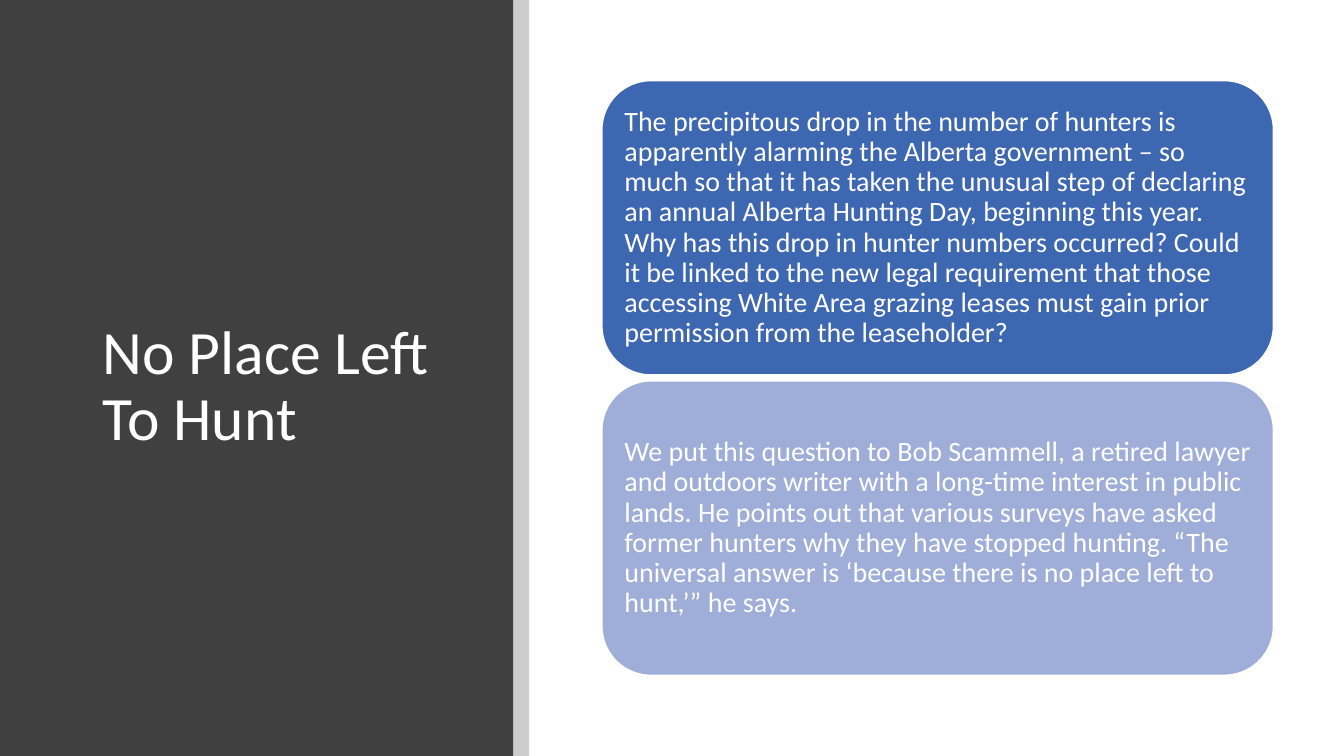
from dataclasses import dataclass

from lxml.etree import SubElement
from pptx import Presentation
from pptx.dml.color import RGBColor
from pptx.enum.shapes import MSO_SHAPE
from pptx.enum.text import MSO_ANCHOR, PP_ALIGN
from pptx.oxml.ns import qn
from pptx.shapes.autoshape import Shape
from pptx.slide import Slide
from pptx.util import Inches, Pt

WIDTH = Inches(13.33)
HEIGHT = Inches(7.5)
FONT = "Calibri"
WHITE = RGBColor(0xFF, 0xFF, 0xFF)
BLACK = RGBColor(0x00, 0x00, 0x00)
CHARCOAL = RGBColor(0x40, 0x40, 0x40)
BLUE = RGBColor(0x3E, 0x67, 0xB2)
PALE_BLUE = RGBColor(0x9F, 0xAE, 0xD8)

PANEL_WIDTH = 38.18
STRIP_WIDTH = 1.2
CARD_LEFT = 44.79
CARD_TOP = 10.67
CARD_WIDTH = 49.96
CARD_HEIGHT = 38.93
CARD_GAP = 0.8


@dataclass(frozen=True)
class Area:
    """A rectangle in percent of the slide's width and height."""

    left: float
    top: float
    width: float
    height: float

    def lengths(self) -> tuple[int, int, int, int]:
        return (
            int(WIDTH * self.left / 100),
            int(HEIGHT * self.top / 100),
            int(WIDTH * self.width / 100),
            int(HEIGHT * self.height / 100),
        )


@dataclass(frozen=True)
class Card:
    text: str
    fill: RGBColor


CARDS = (
    Card(
        "The precipitous drop in the number of hunters is apparently alarming "
        "the Alberta government – so much so that it has taken the unusual step "
        "of declaring an annual Alberta Hunting Day, beginning this year. Why has "
        "this drop in hunter numbers occurred? Could it be linked to the new legal "
        "requirement that those accessing White Area grazing leases must gain "
        "prior permission from the leaseholder?",
        BLUE,
    ),
    Card(
        "We put this question to Bob Scammell, a retired lawyer and outdoors "
        "writer with a long-time interest in public lands. He points out that "
        "various surveys have asked former hunters why they have stopped hunting. "
        "“The universal answer is ‘because there is no place left to hunt,’” he says.",
        PALE_BLUE,
    ),
)


def add_block(page: Slide, kind: MSO_SHAPE, area: Area, fill: RGBColor) -> Shape:
    block = page.shapes.add_shape(kind, *area.lengths())
    block.shadow.inherit = False
    block.fill.solid()
    block.fill.fore_color.rgb = fill
    block.line.fill.background()
    return block


def set_opacity(block: Shape, percent: int) -> None:
    color = block.fill._xPr.find(f"{qn('a:solidFill')}/{qn('a:srgbClr')}")
    SubElement(color, qn("a:alpha")).set("val", str(percent * 1000))


def write(box: Shape, text: str, size: int) -> None:
    frame = box.text_frame
    frame.text = text
    frame.word_wrap = True
    frame.vertical_anchor = MSO_ANCHOR.MIDDLE
    para = frame.paragraphs[0]
    para.alignment = PP_ALIGN.LEFT
    para.line_spacing = 0.9
    span = para.runs[0]
    span.font.name = FONT
    span.font.size = Pt(size)
    span.font.color.rgb = WHITE


def add_card(page: Slide, row: int, card: Card) -> None:
    top = CARD_TOP + row * (CARD_HEIGHT + CARD_GAP)
    area = Area(CARD_LEFT, top, CARD_WIDTH, CARD_HEIGHT)
    block = add_block(page, MSO_SHAPE.ROUNDED_RECTANGLE, area, card.fill)
    block.line.color.rgb = WHITE
    block.line.width = Pt(1)
    write(block, card.text, 20)
    frame = block.text_frame
    frame.margin_left = frame.margin_right = Inches(0.08)
    frame.margin_top = frame.margin_bottom = Inches(0.08)


def main() -> None:
    deck = Presentation()
    deck.slide_width = WIDTH
    deck.slide_height = HEIGHT
    page = deck.slides.add_slide(deck.slide_layouts[6])

    add_block(page, MSO_SHAPE.RECTANGLE, Area(0, 0, PANEL_WIDTH, 100), CHARCOAL)
    strip_area = Area(PANEL_WIDTH, 0, STRIP_WIDTH, 100)
    strip = add_block(page, MSO_SHAPE.RECTANGLE, strip_area, BLACK)
    set_opacity(strip, 20)

    title = page.shapes.add_textbox(*Area(6.9, 11.87, 27.38, 78.8).lengths())
    write(title, "No Place Left To Hunt", 44)

    for row, card in enumerate(CARDS):
        add_card(page, row, card)

    deck.save("out.pptx")


if __name__ == "__main__":
    main()
